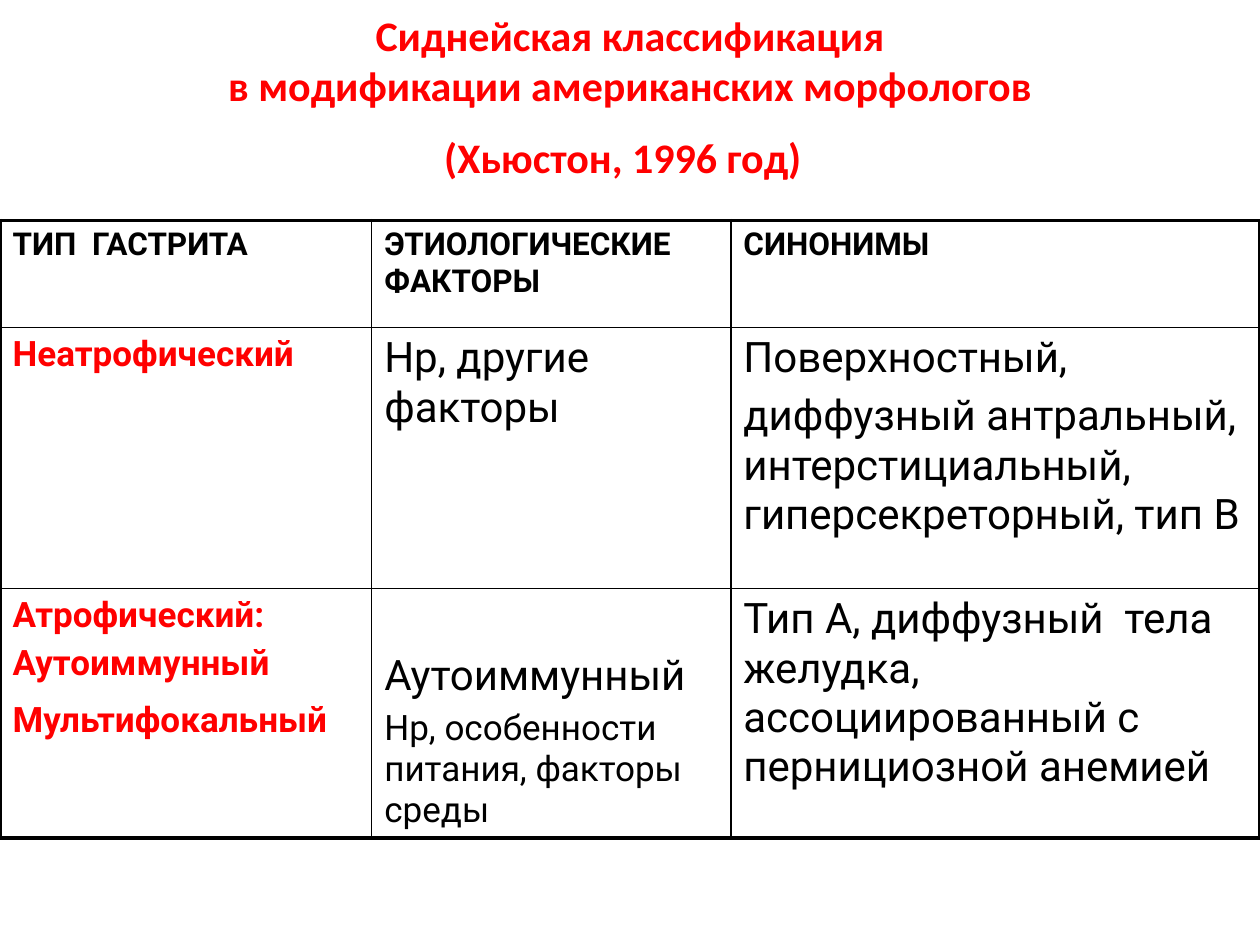
from lxml import etree
from pptx import Presentation
from pptx import util as u
from pptx.dml.color import RGBColor
from pptx.enum import text
from pptx.oxml.ns import qn

COLORS = {"accent": "FF0000", "ink": "000000"}
COLUMN_WIDTHS = [2.95, 2.85, 4.2]
ROW_HEIGHTS = [0.85, 2.07, 1.98]
THICK, THIN = 2.25, 1


def format_run(run, font_name, size, color, bold):
    run.font.name = font_name
    run.font.size = u.Pt(size)
    run.font.bold = bold
    run.font.color.rgb = RGBColor.from_string(COLORS[color])


def add_border(cell, side, width):
    line = etree.SubElement(cell._tc.get_or_add_tcPr(), qn(f"a:ln{side}"), w=str(u.Pt(width)))
    fill = etree.SubElement(line, qn("a:solidFill"))
    etree.SubElement(fill, qn("a:srgbClr"), val=COLORS["ink"])


presentation = Presentation()
presentation.slide_width, presentation.slide_height = u.Inches(10), u.Inches(7.5)
slide = presentation.slides.add_slide(presentation.slide_layouts[5])

title = slide.shapes.title
title.left, title.top = 0, 0
title.width, title.height = presentation.slide_width, u.Inches(1.55)
frame = title.text_frame
frame.text = "Сиднейская классификация\v в модификации американских морфологов \v(Хьюстон, 1996 год)"
frame.word_wrap = True
frame.auto_size = text.MSO_AUTO_SIZE.NONE
frame.vertical_anchor = text.MSO_ANCHOR.MIDDLE
heading = frame.paragraphs[0]
heading.alignment = text.PP_ALIGN.CENTER
for run in heading.runs:
    format_run(run, "Calibri", 24, "accent", True)
# The larger closing space gives the last line its extra height.
closing_space = heading.add_run()
closing_space.text = " "
format_run(closing_space, "Calibri", 36, "accent", True)

# Each cell is a list of (paragraph, size, color, bold).
rows = [
    [
        [("ТИП  ГАСТРИТА", 18, "ink", True)],
        [("ЭТИОЛОГИЧЕСКИЕ  ФАКТОРЫ", 18, "ink", True)],
        [("СИНОНИМЫ", 18, "ink", True)],
    ],
    [
        [("Неатрофический", 20, "accent", True)],
        [("Нр, другие факторы", 24, "ink", False)],
        [("Поверхностный,", 24, "ink", False),
         ("диффузный антральный, интерстициальный, гиперсекреторный, тип В", 24, "ink", False)],
    ],
    [
        [("Атрофический:", 20, "accent", True),
         ("Аутоиммунный", 20, "accent", True),
         ("Мультифокальный", 20, "accent", True)],
        [("Аутоиммунный", 24, "ink", False),
         ("Нр, особенности питания, факторы среды", 20, "ink", False)],
        [("Тип А, диффузный  тела желудка, ассоциированный с пернициозной анемией", 24, "ink", False)],
    ],
]

table = slide.shapes.add_table(
    len(ROW_HEIGHTS), len(COLUMN_WIDTHS), 0, u.Inches(1.75),
    presentation.slide_width, u.Inches(sum(ROW_HEIGHTS))).table
table.first_row = table.horz_banding = False
for column, width in zip(table.columns, COLUMN_WIDTHS):
    column.width = u.Inches(width)
for row, height in zip(table.rows, ROW_HEIGHTS):
    row.height = u.Inches(height)

last_row, last_column = len(ROW_HEIGHTS) - 1, len(COLUMN_WIDTHS) - 1
for row_index, row in enumerate(rows):
    for column_index, content in enumerate(row):
        cell = table.cell(row_index, column_index)
        cell.text_frame.text = "\n".join(item[0] for item in content)
        for index, (paragraph, item) in enumerate(zip(cell.text_frame.paragraphs, content)):
            if index:
                paragraph.space_before = u.Pt(0.2 * item[1])
            format_run(paragraph.runs[0], "Roboto", *item[1:])
        outer_sides = {"L": column_index == 0, "R": column_index == last_column,
                       "T": row_index == 0, "B": row_index == last_row}
        for side, is_outer in outer_sides.items():
            add_border(cell, side, THICK if is_outer else THIN)
        cell.fill.background()

table.cell(2, 0).text_frame.paragraphs[2].space_before = u.Pt(9)
table.cell(2, 1).vertical_anchor = text.MSO_ANCHOR.BOTTOM

presentation.save("out.pptx")
